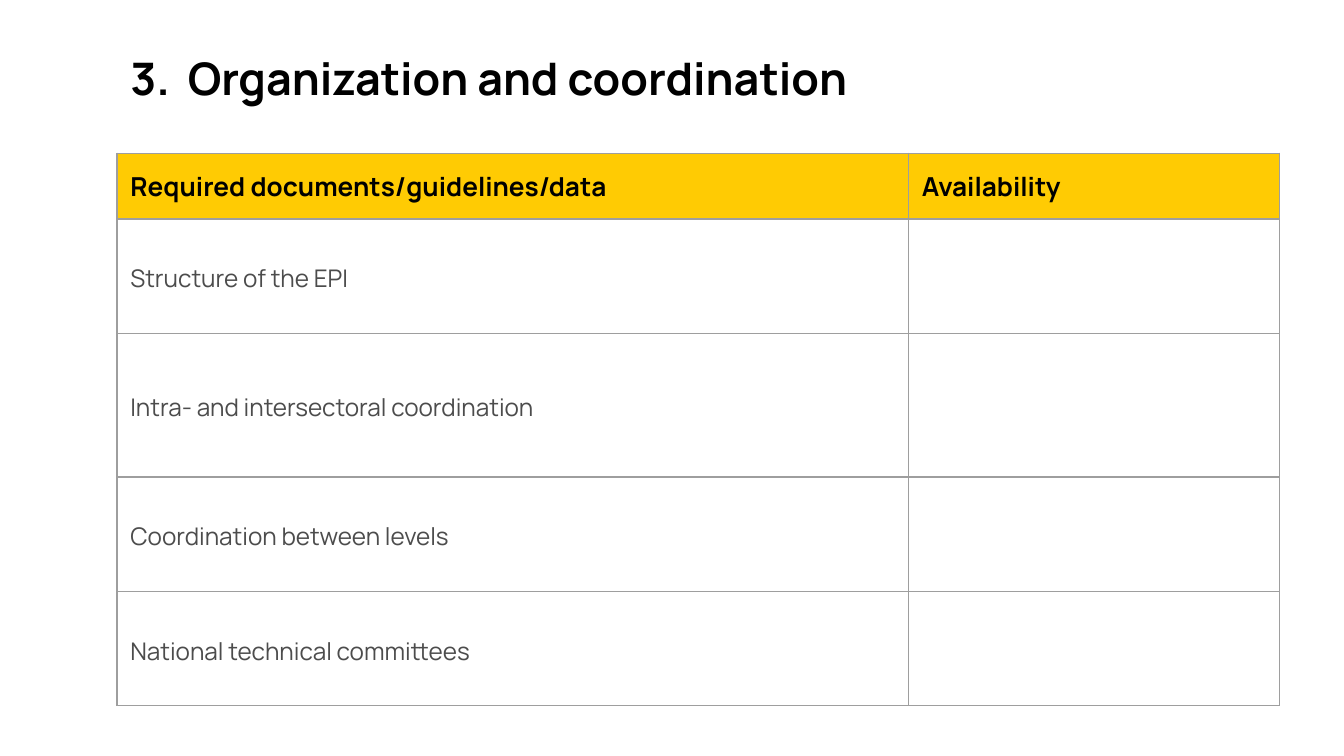
from lxml.etree import SubElement
from pptx import Presentation
from pptx.dml.color import RGBColor
from pptx.enum.text import MSO_ANCHOR as Anchor, MSO_AUTO_SIZE as AutoSize, PP_ALIGN as Align
from pptx.oxml.ns import qn
from pptx.util import Inches, Pt

WIDTH = 10
HEIGHT = WIDTH * 9 / 16
LEFT = 0.87
COLUMNS = [5.89, 2.76]
ROWS = [0.49, 0.85, 1.07, 0.85, 0.85]
HEADINGS = ["Required documents/guidelines/data", "Availability"]
DOCUMENTS = [
    "Structure of the EPI",
    "Intra- and intersectoral coordination",
    "Coordination between levels",
    "National technical committees",
]
MARGINS = {f"margin_{side}": Inches(0.1) for side in ("left", "top", "right", "bottom")}
TITLE = {"size": Pt(24), "bold": True, "color": "000000"}
HEADING = {"size": Pt(14), "bold": True, "color": "000000"}
BODY = {"size": Pt(13), "bold": False, "color": "4C4C4C"}


def rgb(value):
    """Turn a hex string into a colour."""
    return RGBColor.from_string(value)


def set_all(target, values):
    """Set every attribute in a dict of format values."""
    for name, value in values.items():
        setattr(target, name, value)


def style_font(font, look):
    """Apply the typeface and a look to a font."""
    set_all(font, {"name": "Manrope", "size": look["size"], "bold": look["bold"]})
    font.color.rgb = rgb(look["color"])


def add_title(slide, wording):
    """Place and format the slide title."""
    title = slide.shapes.title
    set_all(title, {"left": Inches(LEFT), "top": Inches(0.28),
                    "width": Inches(7.61), "height": Inches(0.59)})
    frame = title.text_frame
    frame.text = wording
    set_all(frame, {"auto_size": AutoSize.NONE, "word_wrap": True,
                    "vertical_anchor": Anchor.MIDDLE, **MARGINS})
    heading = frame.paragraphs[0]
    heading.alignment = Align.LEFT
    style_font(heading.runs[0].font, TITLE)


def add_borders(cell, color, width):
    """Draw a line on all four sides of a cell."""
    properties = cell._tc.get_or_add_tcPr()
    for side in ("lnL", "lnR", "lnT", "lnB"):
        line = SubElement(properties, qn(f"a:{side}"), w=str(width))
        fill = SubElement(line, qn("a:solidFill"))
        SubElement(fill, qn("a:srgbClr"), val=color)


def fill_cell(cell, wording, look, spacing, fill=None):
    """Write and format one table cell."""
    cell.text = wording
    set_all(cell, {"vertical_anchor": Anchor.MIDDLE, **MARGINS})
    entry = cell.text_frame.paragraphs[0]
    entry.line_spacing = spacing
    for run in entry.runs:
        style_font(run.font, look)
    add_borders(cell, "9E9E9E", Pt(0.75))
    if fill:
        cell.fill.solid()
        cell.fill.fore_color.rgb = rgb(fill)
    else:
        cell.fill.background()


def add_checklist(slide):
    """Add the table of documents and their availability."""
    frame = slide.shapes.add_table(
        len(ROWS), len(COLUMNS), Inches(LEFT), Inches(1.14),
        Inches(sum(COLUMNS)), Inches(sum(ROWS)))
    checklist = frame.table
    set_all(checklist, {"first_row": False, "horz_banding": False})
    for column, width in zip(checklist.columns, COLUMNS):
        column.width = Inches(width)
    for row, height in zip(checklist.rows, ROWS):
        row.height = Inches(height)
    for index, heading in enumerate(HEADINGS):
        fill_cell(checklist.cell(0, index), heading, HEADING, 1.0, "FFCB03")
    for index, document in enumerate(DOCUMENTS, start=1):
        for column, wording in enumerate((document, "")):
            fill_cell(checklist.cell(index, column), wording, BODY, 1.15)


def main():
    """Build and save the slide."""
    deck = Presentation()
    set_all(deck, {"slide_width": Inches(WIDTH), "slide_height": Inches(HEIGHT)})
    slide = deck.slides.add_slide(deck.slide_layouts[5])
    add_title(slide, "3.  Organization and coordination")
    add_checklist(slide)
    deck.save("out.pptx")


if __name__ == "__main__":
    main()
